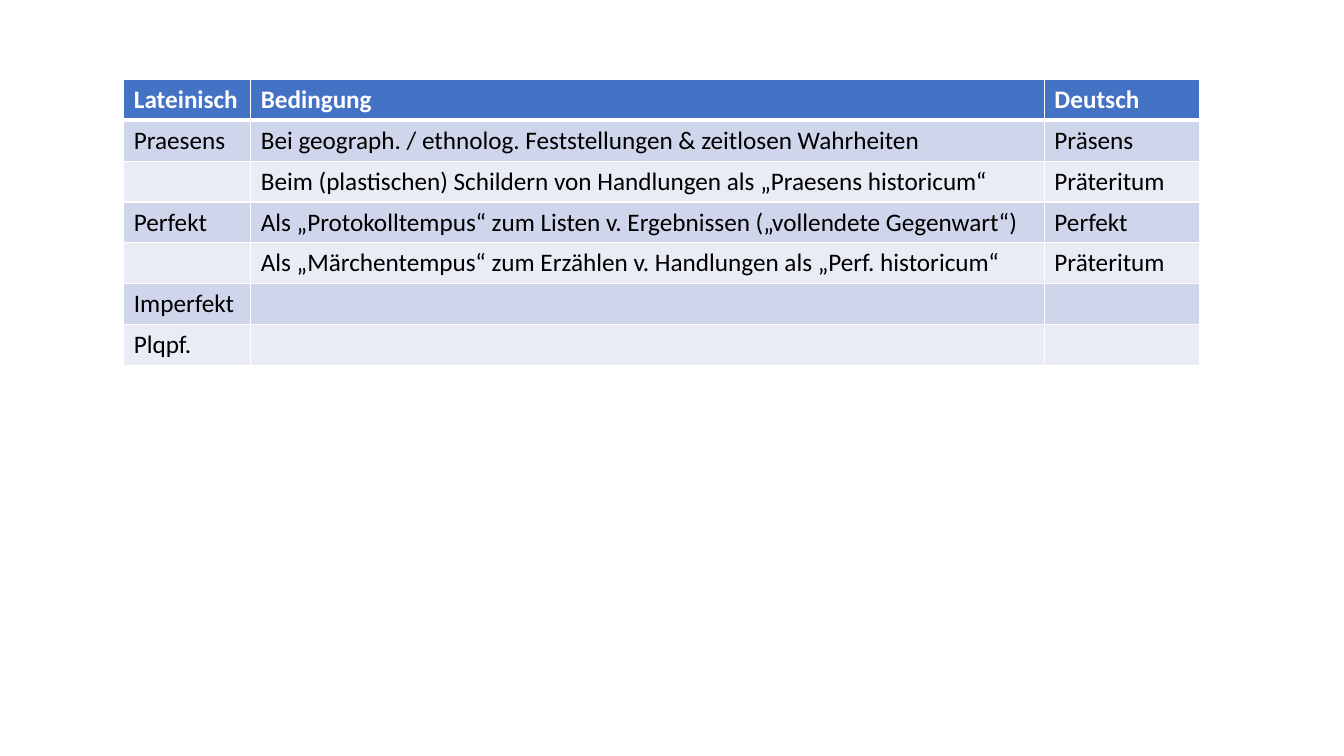
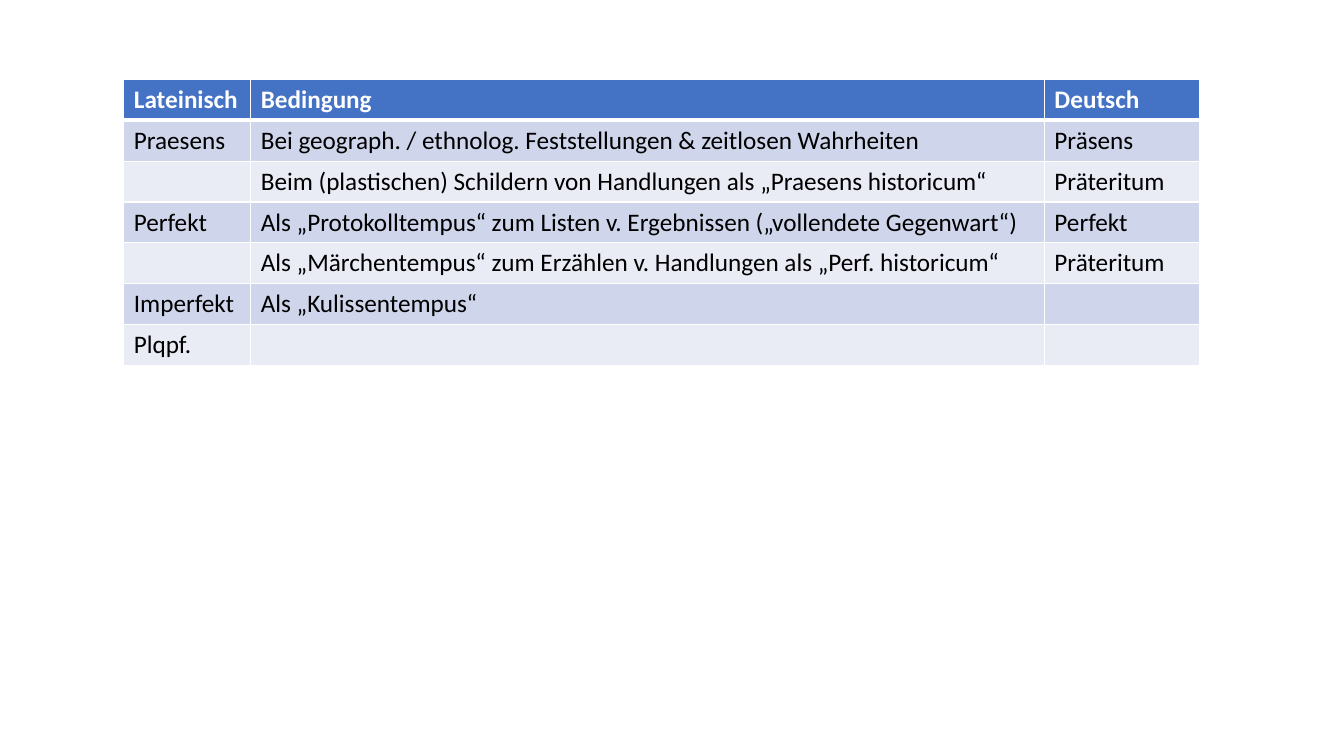
import pptx
import pptx.dml.color
import pptx.oxml
import pptx.oxml.ns
import pptx.util
from pptx.util import Cm, Pt

COLORS = {
    "header": "4472C4",
    "band_dark": "CFD5EA",
    "band_light": "E9EBF5",
    "border": "FFFFFF",
    "header_text": "FFFFFF",
    "body_text": "000000",
}
FONT_NAME = "Calibri"
COLUMN_WIDTHS = [Cm(3.2), Cm(20), Cm(3.9)]
ROW_HEIGHT = Cm(1.03)
TABLE_LEFT, TABLE_TOP = Cm(3.12), Cm(2)

TENSES = [
    ("Lateinisch", "Bedingung", "Deutsch"),
    ("Praesens", "Bei geograph. / ethnolog. Feststellungen & zeitlosen Wahrheiten", "Präsens"),
    ("", "Beim (plastischen) Schildern von Handlungen als „Praesens historicum“", "Präteritum"),
    ("Perfekt", "Als „Protokolltempus“ zum Listen v. Ergebnissen („vollendete Gegenwart“)", "Perfekt"),
    ("", "Als „Märchentempus“ zum Erzählen v. Handlungen als „Perf. historicum“", "Präteritum"),
    ("Imperfekt", "", ""),
    ("Plqpf.", "", ""),
]
IMPERFECT_CONDITIONS = ["", "Als „Kulissentempus“"]


def rgb(name):
    return pptx.dml.color.RGBColor.from_string(COLORS[name])


def add_borders(cell, row_index):
    """Draw thin borders, with a thick line between header and body."""
    widths = {"lnL": 1, "lnR": 1, "lnT": 3 if row_index == 1 else 1, "lnB": 3 if row_index == 0 else 1}
    properties = cell._tc.get_or_add_tcPr()
    for tag, width in widths.items():
        properties.append(pptx.oxml.parse_xml(
            f'<a:{tag} {pptx.oxml.ns.nsdecls("a")} w="{Pt(width)}"><a:solidFill>'
            f'<a:srgbClr val="{COLORS["border"]}"/></a:solidFill></a:{tag}>'
        ))


presentation = pptx.Presentation()
presentation.slide_width = Cm(33.87)
presentation.slide_height = Cm(19.05)
blank_layout = presentation.slide_layouts[6]

for imperfect_condition in IMPERFECT_CONDITIONS:
    slide = presentation.slides.add_slide(blank_layout)
    table = slide.shapes.add_table(
        len(TENSES), len(COLUMN_WIDTHS), TABLE_LEFT, TABLE_TOP,
        sum(COLUMN_WIDTHS), ROW_HEIGHT * len(TENSES),
    ).table
    for column, width in zip(table.columns, COLUMN_WIDTHS):
        column.width = width

    for row_index, texts in enumerate(TENSES):
        table.rows[row_index].height = ROW_HEIGHT
        is_header = row_index == 0
        band = "header" if is_header else "band_dark" if row_index % 2 else "band_light"
        if texts[0] == "Imperfekt":
            texts = (texts[0], imperfect_condition, texts[2])

        for column_index, text in enumerate(texts):
            cell = table.cell(row_index, column_index)
            add_borders(cell, row_index)
            cell.fill.solid()
            cell.fill.fore_color.rgb = rgb(band)
            cell.text = text
            font = cell.text_frame.paragraphs[0].font
            font.name = FONT_NAME
            font.size = Pt(18)
            font.bold = is_header
            font.color.rgb = rgb("header_text" if is_header else "body_text")

presentation.save("out.pptx")
